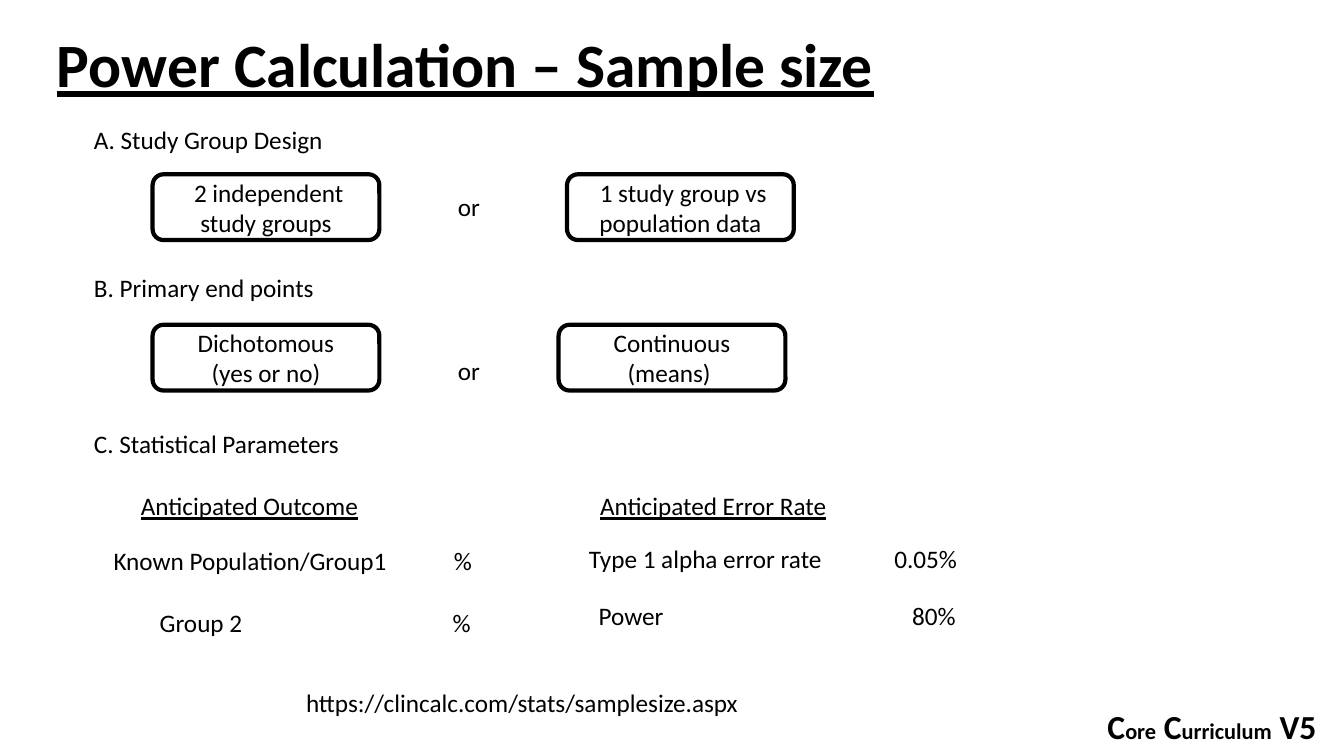
from lxml import etree
from pptx import Presentation
from pptx.dml.color import RGBColor
from pptx.enum.shapes import MSO_SHAPE as Shape
from pptx.enum.text import MSO_ANCHOR as Anchor, MSO_AUTO_SIZE as AutoSize, PP_ALIGN as Align
from pptx.oxml.ns import qn
from pptx.util import Pt

BLACK = RGBColor(0, 0, 0)
WHITE = RGBColor(255, 255, 255)
FONT = "Calibri"
LABEL_HEIGHT = 29
OPTION_SIZE = (162, 47)


def add_run(paragraph, text, size=18, bold=False, underline=False):
    run = paragraph.add_run()
    run.text = text
    font = run.font
    font.name, font.size, font.bold, font.underline = FONT, Pt(size), bold, underline
    font.color.rgb = BLACK


def add_label(slide, left, top, width, text, underline=False, wrap=False):
    """Place one line of text and return its paragraph."""
    label = slide.shapes.add_textbox(Pt(left), Pt(top), Pt(width), Pt(LABEL_HEIGHT))
    label.text_frame.word_wrap = wrap
    paragraph = label.text_frame.paragraphs[0]
    add_run(paragraph, text, underline=underline)
    return paragraph


def add_parameter(slide, left, top, width, name, value, value_edge):
    """Place a name with its value ending at a right-aligned tab stop."""
    paragraph = add_label(slide, left, top, width, f"{name}\t{value}", wrap=True)
    tabs = etree.SubElement(paragraph._p.get_or_add_pPr(), qn("a:tabLst"))
    etree.SubElement(tabs, qn("a:tab"), pos=str(Pt(value_edge)), algn="r")


def add_title(slide, left, top, width, height):
    title = slide.shapes.title
    title.left, title.top, title.width, title.height = Pt(left), Pt(top), Pt(width), Pt(height)
    frame = title.text_frame
    frame.word_wrap = False
    frame.auto_size = AutoSize.NONE
    frame.vertical_anchor = Anchor.TOP
    paragraph = frame.paragraphs[0]
    paragraph.alignment = Align.LEFT
    add_run(paragraph, "Power Calculation – Sample size", 44, bold=True, underline=True)


def add_option(slide, left, top, lines):
    width, height = OPTION_SIZE
    option = slide.shapes.add_shape(
        Shape.ROUNDED_RECTANGLE, Pt(left), Pt(top), Pt(width), Pt(height))
    option.shadow.inherit = False
    option.fill.solid()
    option.fill.fore_color.rgb = WHITE
    option.line.color.rgb = BLACK
    option.line.width = Pt(3)
    frame = option.text_frame
    frame.word_wrap = True
    frame.vertical_anchor = Anchor.MIDDLE
    for index, line in enumerate(lines):
        paragraph = frame.add_paragraph() if index else frame.paragraphs[0]
        paragraph.alignment = Align.CENTER
        add_run(paragraph, line)


def add_choice(slide, left, top, width, heading, first, second, second_left, option_drop, or_drop):
    """Place a heading with two alternatives joined by "or" below it."""
    add_label(slide, left, top, width, heading)
    add_option(slide, left + 49, top + option_drop, first)
    add_option(slide, left + second_left, top + option_drop, second)
    add_label(slide, left + 260, top + or_drop, 30, "or")


def add_statistics(slide, left, top):
    add_label(slide, left, top, 191.5, "C. Statistical Parameters")
    for offset, width, heading in ((33.5, 171.5, "Anticipated Outcome"),
                                   (361.5, 178, "Anticipated Error Rate")):
        add_label(slide, left + offset, top + 44.5, width, heading, underline=True)
    for x, y, width, name, value, value_edge in (
            (14, 83.5, 275, "Known Population/Group1", "%", 256),
            (47, 128, 243, "Group 2", "%", 222),
            (353.5, 82, 315, "Type 1 alpha error rate", "0.05%", 263),
            (360.5, 123, 284, "Power", "80%", 255)):
        add_parameter(slide, left + x, top + y, width, name, value, value_edge)


def add_footer(slide, left, top, width, height):
    footer = slide.shapes.add_textbox(Pt(left), Pt(top), Pt(width), Pt(height))
    footer.text_frame.word_wrap = True
    paragraph = footer.text_frame.paragraphs[0]
    for text, size in (("C", 24), ("ore", 16), (" C", 24), ("urriculum", 16), (" V5", 24)):
        add_run(paragraph, text, size, bold=True)


def main():
    deck = Presentation()
    deck.slide_width, deck.slide_height = Pt(960), Pt(540)
    slide = deck.slides.add_slide(deck.slide_layouts[5])
    add_footer(slide, 784, 501, 169.5, 36)
    add_title(slide, 33.5, 15, 603.5, 60.5)
    add_choice(slide, 60, 85.5, 180, "A. Study Group Design",
               [" 2 independent study groups"], [" 1 study group vs population data"],
               second_left=345, option_drop=39, or_drop=47.5)
    add_choice(slide, 60, 191, 174, "B. Primary end points",
               ["Dichotomous", "(yes or no)"], ["Continuous", "(means) "],
               second_left=339, option_drop=41, or_drop=59)
    add_statistics(slide, 60, 302.5)
    add_label(slide, 211.5, 487.5, 406, "https://clincalc.com/stats/samplesize.aspx", wrap=True)
    deck.save("out.pptx")


if __name__ == "__main__":
    main()
